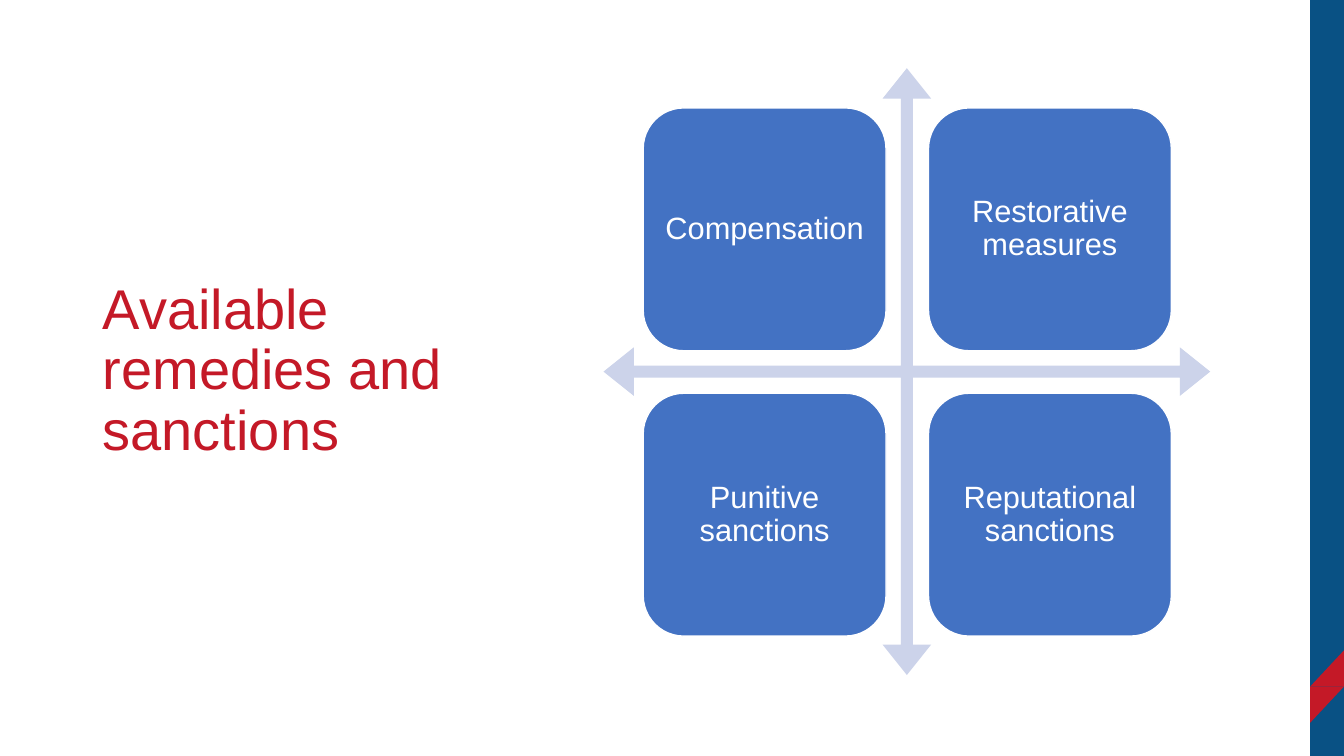
from dataclasses import dataclass

from pptx import Presentation
from pptx.dml.color import RGBColor
from pptx.enum.shapes import MSO_SHAPE
from pptx.enum.text import MSO_ANCHOR, MSO_AUTO_SIZE, PP_ALIGN
from pptx.util import Cm, Pt

RECT = MSO_SHAPE.RECTANGLE
ROUNDED = MSO_SHAPE.ROUNDED_RECTANGLE
TRIANGLE = MSO_SHAPE.RIGHT_TRIANGLE
QUAD_ARROW = MSO_SHAPE.QUAD_ARROW
MIDDLE = MSO_ANCHOR.MIDDLE
NO_AUTOFIT = MSO_AUTO_SIZE.NONE
LEFT, CENTER = PP_ALIGN.LEFT, PP_ALIGN.CENTER
TITLE_ONLY = 5


@dataclass(frozen=True)
class Theme:
    font: str = "Arial"
    title_size: int = 40
    tile_size: int = 22
    red: str = "C41927"
    navy: str = "095184"
    blue: str = "4372C3"
    pale: str = "CCD3EA"
    white: str = "FFFFFF"


def write_text(frame, text, *, font, size, color, align, inset_x, inset_y):
    frame.word_wrap = True
    frame.auto_size = NO_AUTOFIT
    frame.vertical_anchor = MIDDLE
    frame.margin_left = frame.margin_right = Cm(inset_x)
    frame.margin_top = frame.margin_bottom = Cm(inset_y)
    paragraph = frame.paragraphs[0]
    paragraph.alignment = align
    paragraph.line_spacing = 0.9
    run = paragraph.add_run()
    run.text = text
    run.font.name = font
    run.font.size = Pt(size)
    run.font.color.rgb = RGBColor.from_string(color)


class SlideBuilder:
    def __init__(self, slide, theme):
        self.slide = slide
        self.theme = theme

    def title(self, text, left, top, width, height):
        title = self.slide.shapes.title
        title.left, title.top = Cm(left), Cm(top)
        title.width, title.height = Cm(width), Cm(height)
        write_text(title.text_frame, text, font=self.theme.font,
                   size=self.theme.title_size, color=self.theme.red,
                   align=LEFT, inset_x=0.25, inset_y=0.13)

    def shape(self, kind, left, top, width, height, fill, adjustments=()):
        shape = self.slide.shapes.add_shape(
            kind, Cm(left), Cm(top), Cm(width), Cm(height))
        shape.shadow.inherit = False
        shape.fill.solid()
        shape.fill.fore_color.rgb = RGBColor.from_string(fill)
        shape.line.fill.background()
        for index, value in enumerate(adjustments):
            shape.adjustments[index] = value
        return shape

    def ribbon_half(self, left, top, width, height, rotation):
        half = self.shape(TRIANGLE, left, top, width, height, self.theme.red)
        half.rotation = rotation
        half._element.spPr.xfrm.set("flipH", "1")

    def tile(self, text, left, top, side):
        tile = self.shape(ROUNDED, left, top, side, side,
                          self.theme.blue, [0.167])
        tile.line.color.rgb = RGBColor.from_string(self.theme.white)
        tile.line.width = Pt(1)
        write_text(tile.text_frame, text, font=self.theme.font,
                   size=self.theme.tile_size, color=self.theme.white,
                   align=CENTER, inset_x=0.22, inset_y=0.22)


def main():
    deck = Presentation()
    deck.slide_width, deck.slide_height = Cm(33.87), Cm(19.05)
    theme = Theme()
    slide = deck.slides.add_slide(deck.slide_layouts[TITLE_ONLY])
    builder = SlideBuilder(slide, theme)

    # Side band with its diagonal ribbon
    band_left, band_width, fold = 33.02, 0.85, 0.91
    ribbon_top = 16.39
    builder.shape(RECT, band_left, 0, band_width, 19.05, theme.navy)
    for row, rotation in enumerate((0, 180)):
        builder.ribbon_half(band_left, ribbon_top + row * fold,
                            band_width, fold, rotation)

    # Title
    matrix_top, matrix_side = 1.72, 15.29
    builder.title("Available remedies and sanctions",
                  2.34, matrix_top, 9.37, matrix_side)

    # Crossed arrows behind the matrix
    matrix_left = 15.21
    builder.shape(QUAD_ARROW, matrix_left, matrix_top, matrix_side,
                  matrix_side, theme.pale, [0.02, 0.04, 0.05])

    # Two-by-two matrix of remedies
    remedies = (("Compensation", "Restorative measures"),
                ("Punitive sanctions", "Reputational sanctions"))
    margin, tile_side, pitch = 1.0, 6.12, 7.19
    for row, names in enumerate(remedies):
        for column, name in enumerate(names):
            builder.tile(name, matrix_left + margin + column * pitch,
                         matrix_top + margin + row * pitch, tile_side)

    deck.save("out.pptx")


if __name__ == "__main__":
    main()
